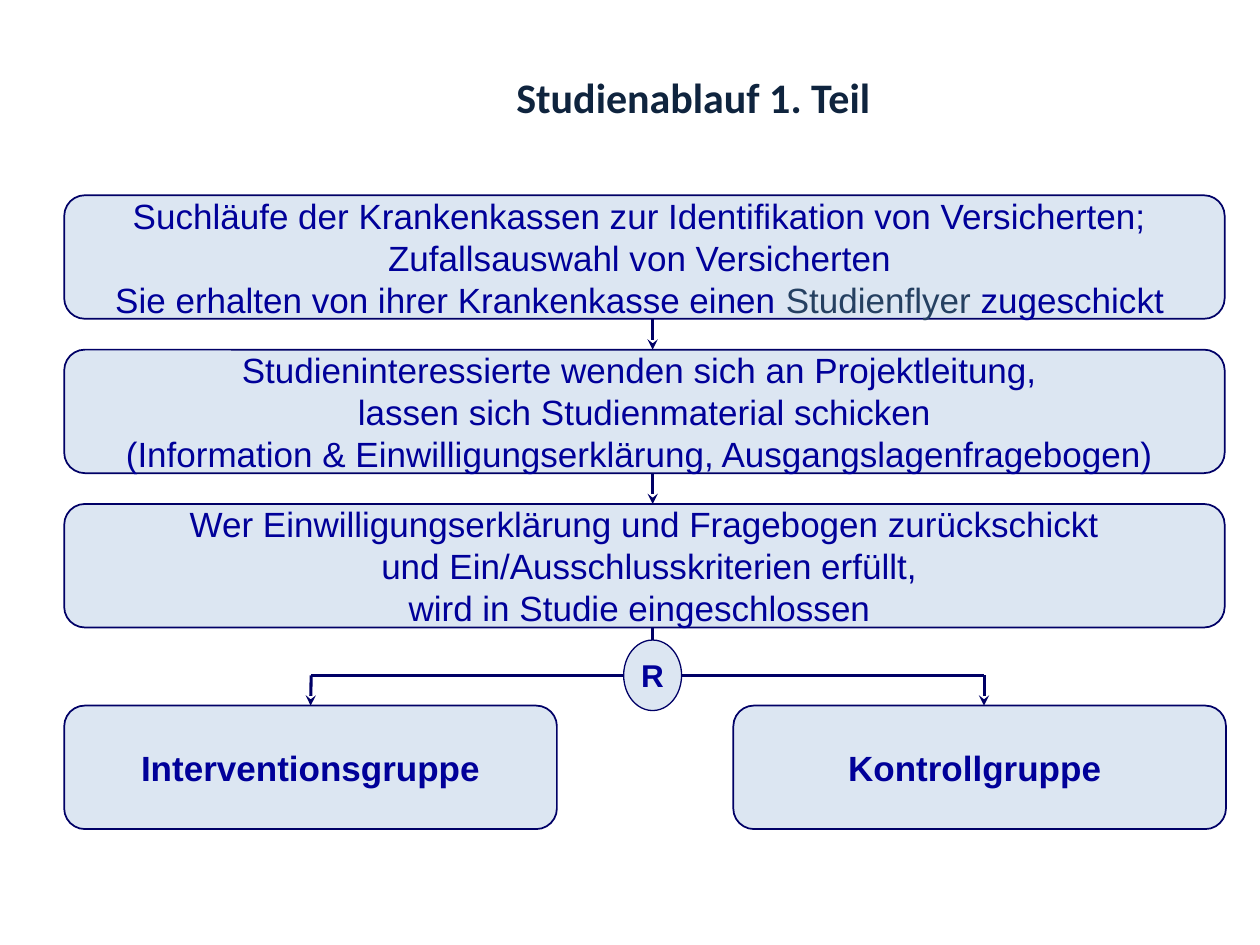
from lxml import etree
from pptx import Presentation
from pptx.dml.color import RGBColor
from pptx.enum import shapes, text
from pptx.oxml import ns
from pptx.util import Inches, Pt

COLORS = {"fill": "DCE6F2", "line": "000066", "text": "000099",
          "flyer": "254061", "title": "0F243E"}
LEFT, FULL, HALF = 0.51, 9.21, 3.91
TOP, PITCH, HEIGHT = 1.55, 1.225, 0.98
GROUP_TOP = 5.6
AXIS, BRANCH = 5.18, 5.36
NODE_W, NODE_H = 0.46, 0.56
STEPS = [
    [[("Suchläufe der Krankenkassen zur Identifikation von Versicherten; ", "text")],
     [("Zufallsauswahl von Versicherten ", "text")],
     [("Sie erhalten von ihrer Krankenkasse einen ", "text"),
      ("Studienflyer", "flyer"), (" zugeschickt ", "text")]],
    [[("Studieninteressierte wenden sich an Projektleitung, ", "text")],
     [("lassen sich Studienmaterial schicken", "text")],
     [("(Information & Einwilligungserklärung, Ausgangslagenfragebogen) ", "text")]],
    [[("Wer Einwilligungserklärung und Fragebogen zurückschickt", "text")],
     [(" und Ein/Ausschlusskriterien erfüllt,", "text")],
     [("wird in Studie eingeschlossen ", "text")]],
]


def color(name):
    return RGBColor.from_string(COLORS[name])


def set_all(target, values):
    for name, value in values.items():
        setattr(target, name, value)


def write(frame, lines, size, bold=False, font="Arial", align=text.PP_ALIGN.CENTER):
    for index, spans in enumerate(lines):
        para = frame.paragraphs[0] if index == 0 else frame.add_paragraph()
        para.alignment = align
        for words, shade in spans:
            span = para.add_run()
            span.text = words
            set_all(span.font, {"name": font, "size": Pt(size), "bold": bold})
            span.font.color.rgb = color(shade)


def add_box(page, kind, place, lines, size=20, bold=False, width=1):
    box = page.shapes.add_shape(kind, *map(Inches, place))
    box.shadow.inherit = False
    box.fill.solid()
    box.fill.fore_color.rgb = color("fill")
    box.line.color.rgb = color("line")
    box.line.width = Pt(width)
    set_all(box.text_frame, {
        "word_wrap": True, "vertical_anchor": text.MSO_ANCHOR.MIDDLE,
        "margin_left": Inches(0.04), "margin_right": Inches(0.04),
        "margin_top": Inches(0.02), "margin_bottom": Inches(0.02)})
    write(box.text_frame, lines, size, bold)
    return box


def add_line(page, start, end, arrow=False):
    line = page.shapes.add_connector(
        shapes.MSO_CONNECTOR.STRAIGHT, *map(Inches, start + end))
    line.line.color.rgb = color("line")
    line.line.width = Pt(1.75)
    if arrow:
        tail = etree.SubElement(line.line._get_or_add_ln(), ns.qn("a:tailEnd"))
        tail.set("type", "stealth")
    etree.SubElement(line._element.spPr, ns.qn("a:effectLst"))
    return line


def add_title(page, words):
    box = page.shapes.add_textbox(*map(Inches, (4, 0.52, 3.04, 0.5)))
    set_all(box.text_frame, {"word_wrap": False,
                             "auto_size": text.MSO_AUTO_SIZE.SHAPE_TO_FIT_TEXT})
    write(box.text_frame, [[(words, "title")]], 24, True, "Calibri", text.PP_ALIGN.LEFT)


def main():
    deck = Presentation()
    deck.slide_width, deck.slide_height = Inches(10), Inches(7.5)
    page = deck.slides.add_slide(deck.slide_layouts[6])
    process = shapes.MSO_SHAPE.FLOWCHART_ALTERNATE_PROCESS
    add_title(page, "Studienablauf 1. Teil")

    for row, lines in enumerate(STEPS):
        top = TOP + row * PITCH
        add_box(page, process, (LEFT, top, FULL, HEIGHT), lines)
        bottom = top + HEIGHT
        last = row == len(STEPS) - 1
        add_line(page, (AXIS, bottom), (AXIS, bottom + PITCH - HEIGHT), not last)

    groups = [("Interventionsgruppe", LEFT, 2.47, AXIS - NODE_W / 2),
              ("Kontrollgruppe ", LEFT + FULL - HALF + 0.01, 7.81, AXIS + NODE_W / 2)]
    for name, left, drop, node_side in groups:
        box = add_box(page, process, (left, GROUP_TOP, HALF, HEIGHT),
                      [[(name, "text")]], bold=True)
        add_line(page, (drop, BRANCH), (node_side, BRANCH))
        arrow = add_line(page, (drop, BRANCH), (drop, GROUP_TOP), True)
        if abs(drop - left - HALF / 2) < 0.01:
            arrow.end_connect(box, 0)

    add_box(page, shapes.MSO_SHAPE.FLOWCHART_CONNECTOR,
            (AXIS - NODE_W / 2, BRANCH - NODE_H / 2, NODE_W, NODE_H),
            [[("R", "text")]], 18, True, 0.75)
    deck.save("out.pptx")


if __name__ == "__main__":
    main()
